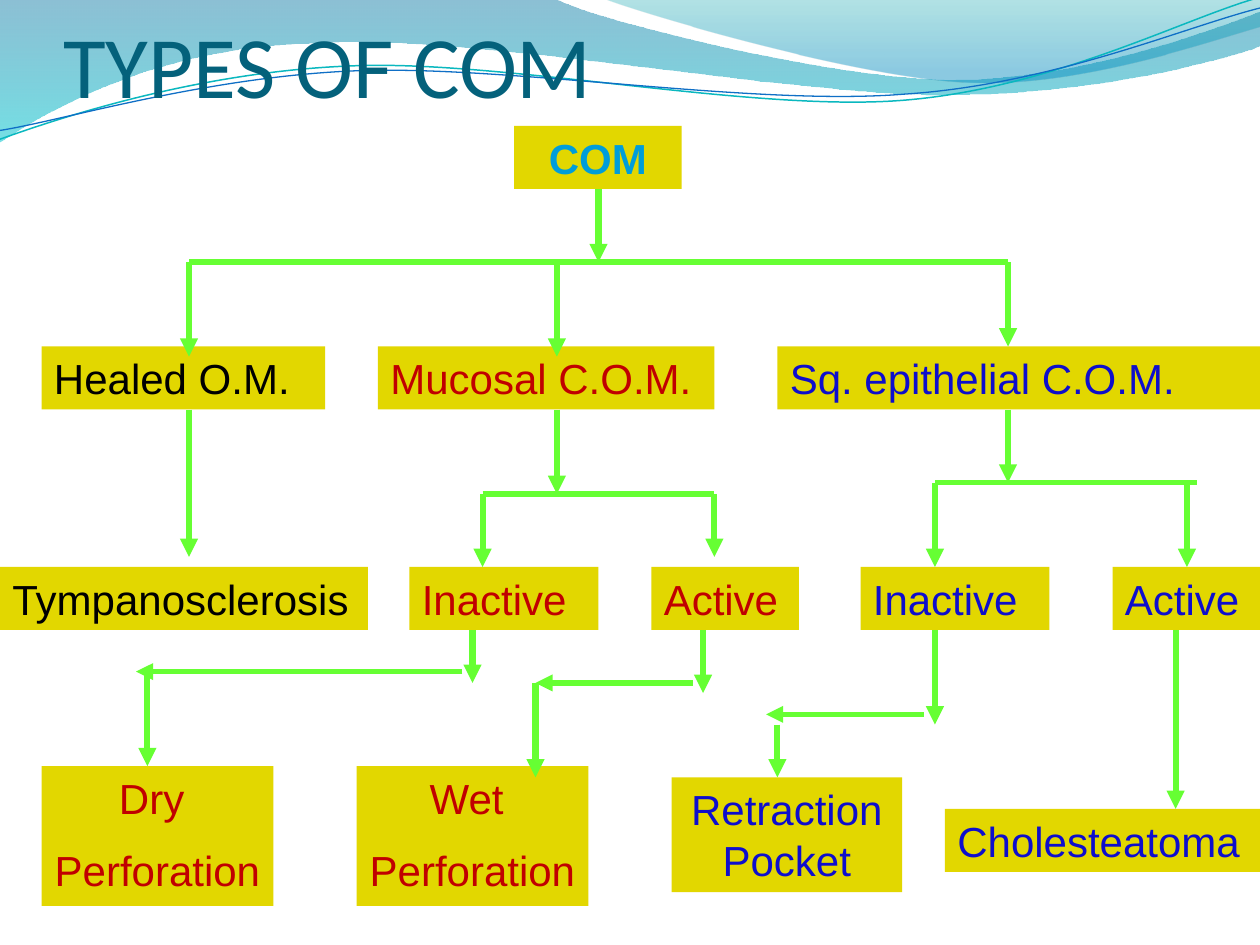
from lxml import etree
from pptx import Presentation
from pptx.dml.color import RGBColor
from pptx.enum.shapes import MSO_CONNECTOR, MSO_SHAPE
from pptx.enum.text import MSO_ANCHOR, PP_ALIGN
from pptx.oxml import parse_xml
from pptx.oxml.ns import nsdecls, qn
from pptx.util import Inches, Pt

STRAIGHT = MSO_CONNECTOR.STRAIGHT
RECTANGLE = MSO_SHAPE.RECTANGLE
TOP, BOTTOM = MSO_ANCHOR.TOP, MSO_ANCHOR.BOTTOM
LEFT, CENTER = PP_ALIGN.LEFT, PP_ALIGN.CENTER

TITLE_TEAL = RGBColor(0x04, 0x61, 0x7B)
YELLOW = RGBColor(0xE2, 0xD7, 0x00)
GREEN = RGBColor(0x66, 0xFF, 0x33)
SKY = RGBColor(0x00, 0x9D, 0xD9)
BLACK = RGBColor(0x00, 0x00, 0x00)
RED = RGBColor(0xC0, 0x00, 0x00)
BLUE = RGBColor(0x0E, 0x0E, 0xCC)
WAVE_TEAL = RGBColor(0x0A, 0xB8, 0xBF)
WAVE_BLUE = RGBColor(0x0F, 0x6F, 0xC6)

LINE_TILT = 357.3

# Wave outlines: one point is a straight step, three points are a Bezier curve
BROAD_WAVE = [
    [(0, 0)], [(4.4, -0.01)],
    [(4.76, 0.17), (6.64, 0.63), (7.58, 0.63)],
    [(8.53, 0.63), (9.58, 0.26), (10, 0.09)],
    [(10.01, 0.36)],
    [(9.83, 0.44), (8.7, 0.76), (7.46, 0.75)],
    [(6.22, 0.75), (3.82, 0.28), (2.57, 0.34)],
    [(1.29, 0.36), (0.46, 0.83), (-0.01, 1.13)],
    [(0, 0)],
]
RIGHT_WAVE = [
    [(4.79, -0.01)],
    [(5.09, 0.11), (6.82, 0.62), (7.69, 0.65)],
    [(8.56, 0.69), (9.61, 0.32), (10, 0.21)],
    [(10, 0)], [(4.79, -0.01)],
]
# The thin lines are given before they are tilted
TEAL_LINE = [
    [(-0.02, 0.87)],
    [(0.47, 0.72), (1.58, 0.41), (2.78, 0.42)],
    [(3.96, 0.42), (5.91, 0.93), (7.12, 0.9)],
    [(8.32, 0.87), (9.4, 0.36), (10, 0.22)],
]
BLUE_LINE = [
    [(-0.02, 0.8)],
    [(0.46, 0.75), (1.64, 0.45), (2.83, 0.46)],
    [(4.03, 0.47), (5.96, 0.89), (7.16, 0.85)],
    [(8.35, 0.83), (9.42, 0.42), (10.02, 0.3)],
]

# Rows of the tree, in inches below its top
KINDS, STATES, RESULTS = 1.75, 3.5, 5.08
ROW = 0.5
# left, top, width, height, lines, colour
BOXES = [
    (4.08, 0, 1.33, ROW, ["COM"], SKY),
    (0.33, KINDS, 2.25, ROW, ["Healed O.M."], BLACK),
    (6.17, KINDS, 3.83, ROW, ["Sq. epithelial C.O.M."], BLUE),
    (3, KINDS, 2.67, ROW, ["Mucosal C.O.M."], RED),
    (5.17, STATES, 1.17, ROW, ["Active"], RED),
    (3.25, STATES, 1.5, ROW, ["Inactive"], RED),
    (6.83, STATES, 1.5, ROW, ["Inactive"], BLUE),
    (8.83, STATES, 1.17, ROW, ["Active"], BLUE),
    (0, STATES, 2.92, ROW, ["Tympanosclerosis"], BLACK),
    (2.83, RESULTS, 1.84, 1.11, ["Wet ", "Perforation"], RED),
    (0.33, RESULTS, 1.84, 1.11, ["Dry ", "Perforation"], RED),
    (5.33, 5.17, 1.83, 0.91, ["Retraction Pocket"], BLUE),
    (7.5, 5.42, 2.5, ROW, ["Cholesteatoma"], BLUE),
]
CENTERED = {"COM", "Dry ", "Wet ", "Retraction Pocket"}

# Branch bars: left, right, y
BARS = [(1.5, 8, 1.08), (3.83, 5.67, 2.92), (7.42, 9.5, 2.83)]
# Downward arrows: x, start, end
DOWN_ARROWS = [
    (4.75, 0.5, 1.08),
    (4.42, 1.08, 1.83), (8, 1.08, 1.75), (1.5, 1.08, 1.83),
    (4.42, 2.25, 2.92), (1.5, 2.25, 3.42), (8, 2.25, 2.83),
    (3.83, 2.92, 3.5), (7.42, 2.83, 3.5),
    (5.67, 2.92, 3.42), (9.42, 2.83, 3.5),
    (9.33, 4, 5.42), (3.75, 4, 4.42), (5.58, 4, 4.5), (7.42, 4, 4.75),
    (4.25, 4.42, 5.17), (6.17, 4.75, 5.17), (1.17, 4.33, 5.08),
]
# Leftward arrows: start, end, y
LEFT_ARROWS = [(3.67, 1.08, 4.33), (5.5, 4.25, 4.42), (7.33, 6.08, 4.67)]


def add_wave(slide, left, top, outline, closed):
    start, *points = [(left + Inches(x), top + Inches(y)) for step in outline for x, y in step]
    builder = slide.shapes.build_freeform(*start)
    builder.add_line_segments(points, close=closed)
    wave = builder.convert_to_shape()
    wave.shadow.inherit = False
    # Join each run of three points into a Bezier curve
    segments = iter(list(wave._element.iter(qn("a:lnTo"))))
    for step in outline[1:]:
        parts = [next(segments) for _ in step]
        if len(parts) == 3:
            curve = etree.Element(qn("a:cubicBezTo"))
            parts[0].addprevious(curve)
            for part in parts:
                curve.append(part[0])
                part.getparent().remove(part)
    return wave


def add_waves(slide, left, top):
    # Translucent bands, with (position, colour, opacity) stops from top to bottom
    for outline, stops in (
        (BROAD_WAVE, [(0, "0074A1", 45), (100, "00C6CF", 55)]),
        (RIGHT_WAVE, [(0, "00A1A9", 30), (80, "008BBF", 45)]),
    ):
        band = add_wave(slide, left, top, outline, True)
        band.line.fill.background()
        stop_xml = "".join(
            f'<a:gs pos="{pos * 1000}"><a:srgbClr val="{color}">'
            f'<a:alpha val="{opacity * 1000}"/></a:srgbClr></a:gs>'
            for pos, color, opacity in stops)
        gradient = parse_xml(f'<a:gradFill {nsdecls("a")}><a:gsLst>{stop_xml}</a:gsLst>'
                             '<a:lin ang="5400000" scaled="1"/></a:gradFill>')
        band._element.spPr.find(qn("a:custGeom")).addnext(gradient)
    # Thin wave lines
    for outline, color, width in ((TEAL_LINE, WAVE_TEAL, 0.85), (BLUE_LINE, WAVE_BLUE, 0.75)):
        curve = add_wave(slide, left, top, outline, False)
        curve.rotation = LINE_TILT
        curve.fill.background()
        curve.line.color.rgb = color
        curve.line.width = Pt(width)


def write(paragraph, text, font_name, size, color, align, bold=False):
    paragraph.alignment = align
    run = paragraph.add_run()
    run.text = text
    run.font.name, run.font.size, run.font.bold = font_name, Pt(size), bold
    run.font.color.rgb = color


def add_title(slide, left, top, width, height):
    title = slide.shapes.title
    title.left, title.top, title.width, title.height = left, top, width, height
    frame = title.text_frame
    frame.vertical_anchor = BOTTOM
    frame.margin_left = frame.margin_right = frame.margin_bottom = 0
    frame.margin_top = Inches(0.05)
    write(frame.paragraphs[0], "TYPES OF COM", "Calibri", 50, TITLE_TEAL, LEFT)
    # Bring the title in front of the waves
    slide.shapes._spTree.append(title._element)


def add_box(slide, left, top, width, height, lines, color):
    box = slide.shapes.add_shape(RECTANGLE, left, top, width, height)
    box.shadow.inherit = False
    box.fill.solid()
    box.fill.fore_color.rgb = YELLOW
    box.line.fill.background()
    frame = box.text_frame
    frame.word_wrap = True
    frame.vertical_anchor = TOP
    align = CENTER if lines[0] in CENTERED else LEFT
    for i, line in enumerate(lines):
        paragraph = frame.add_paragraph() if i else frame.paragraphs[0]
        if i:
            paragraph.space_before = Pt(12.5)
        write(paragraph, line, "Arial", 24, color, align, bold=color == SKY)


def add_branch(slide, x1, y1, x2, y2, width, arrow):
    branch = slide.shapes.add_connector(STRAIGHT, x1, y1, x2, y2)
    branch.line.color.rgb = GREEN
    branch.line.width = Pt(width)
    if arrow:
        etree.SubElement(branch.line._get_or_add_ln(), qn("a:tailEnd"), type="triangle")
    etree.SubElement(branch._element.spPr, qn("a:effectLst"))


def add_tree(slide, left, top):
    for x, y, width, height, lines, color in BOXES:
        add_box(slide, left + Inches(x), top + Inches(y), Inches(width), Inches(height),
                lines, color)
    branches = [(x1, y, x2, y, 3.25, False) for x1, x2, y in BARS]
    branches += [(x, y1, x, y2, 3.5, True) for x, y1, y2 in DOWN_ARROWS]
    branches += [(x1, y, x2, y, 3.25, True) for x1, x2, y in LEFT_ARROWS]
    for x1, y1, x2, y2, width, arrow in branches:
        add_branch(slide, left + Inches(x1), top + Inches(y1),
                   left + Inches(x2), top + Inches(y2), width, arrow)


def main():
    prs = Presentation()
    prs.slide_width, prs.slide_height = Inches(10), Inches(7.5)
    slide = prs.slides.add_slide(prs.slide_layouts[5])
    add_waves(slide, 0, 0)
    add_title(slide, Inches(0.5), 0, Inches(9), Inches(0.92))
    add_tree(slide, 0, Inches(1))
    prs.save("out.pptx")


if __name__ == "__main__":
    main()
